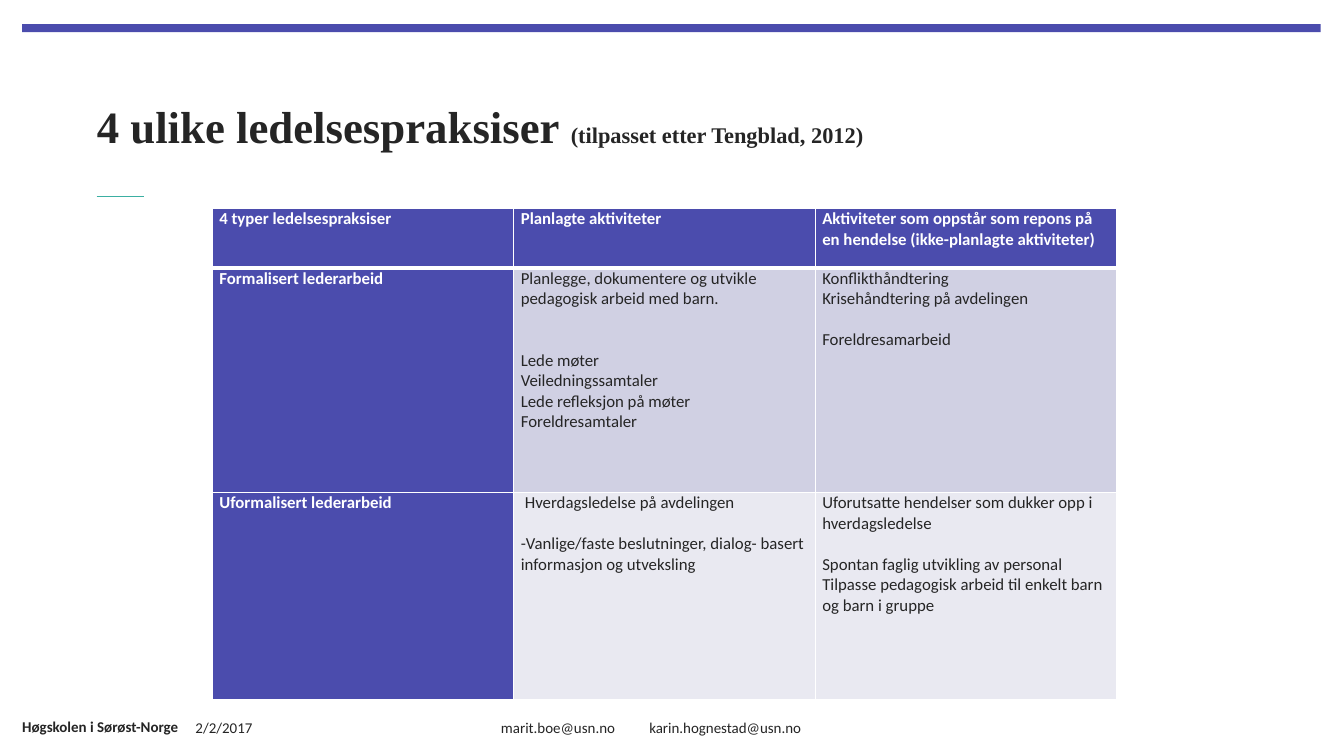
from dataclasses import dataclass

from lxml import etree
from pptx import Presentation
from pptx.dml.color import RGBColor
from pptx.enum.shapes import MSO_CONNECTOR, MSO_SHAPE
from pptx.enum.text import MSO_ANCHOR, MSO_AUTO_SIZE, PP_ALIGN
from pptx.oxml.ns import qn
from pptx.slide import Slide
from pptx.table import _Cell
from pptx.text.text import TextFrame, _Paragraph, _Run
from pptx.util import Inches, Pt

RECTANGLE = MSO_SHAPE.RECTANGLE
STRAIGHT = MSO_CONNECTOR.STRAIGHT
MIDDLE = MSO_ANCHOR.MIDDLE
LEFT = PP_ALIGN.LEFT
NO_AUTOFIT = MSO_AUTO_SIZE.NONE

INDIGO = RGBColor(0x4B, 0x4C, 0xAD)
TEAL = RGBColor(0x3B, 0xAF, 0xA2)
INK = RGBColor(0x25, 0x25, 0x25)
WHITE = RGBColor(0xFF, 0xFF, 0xFF)
LAVENDER = RGBColor(0xD0, 0xD0, 0xE3)
MIST = RGBColor(0xE9, 0xE9, 0xF1)

SLIDE_WIDTH, SLIDE_HEIGHT = Inches(13.33), Inches(7.5)
BODY_FONT, TITLE_FONT = "Calibri", "Times New Roman"
CELL_SIZE, FOOTER_SIZE = 12, 10.7
LINE_PITCH = 14.65


@dataclass(frozen=True)
class Area:
    """A box on a grid of 100 columns by 100 rows."""

    left: float
    top: float
    width: float
    height: float

    def box(self) -> tuple[int, int, int, int]:
        """Return the box as slide lengths."""
        return columns(self.left), rows(self.top), columns(self.width), rows(self.height)


@dataclass(frozen=True)
class Entry:
    """A paragraph in a table cell, with empty lines above it."""

    text: str
    lines_above: int = 0
    indent: float = 0


@dataclass(frozen=True)
class TableRow:
    """A table row: its height, the fill of its body cells and its cells."""

    height: float
    fill: RGBColor
    cells: tuple[tuple[Entry, ...], ...]


@dataclass(frozen=True)
class FooterText:
    """A line of footer text."""

    text: str
    area: Area
    bold: bool = False
    inset: float = 0
    tab: float = 0


TITLE_PARTS = (("4 ulike ledelsespraksiser ", 32), ("(tilpasset etter Tengblad, 2012)", 16))
TITLE_AREA = Area(7.2, 8.27, 87.1, 16.67)
BAR_AREA = Area(1.65, 3.2, 96.62, 1.07)
RULE_AREA = Area(7.2, 26, 3.55, 0)
TABLE_AREA = Area(15.8, 27.6, 67.29, 64.93)

TABLE_ROWS = (
    TableRow(7.87, INDIGO, (
        (Entry("4 typer ledelsespraksiser"),),
        (Entry("Planlagte aktiviteter"),),
        (Entry("Aktiviteter som oppstår som repons på en hendelse (ikke-planlagte aktiviteter)"),),
    )),
    TableRow(29.73, LAVENDER, (
        (Entry("Formalisert lederarbeid"),),
        (
            Entry("Planlegge, dokumentere og utvikle pedagogisk arbeid med barn."),
            Entry("Lede møter", lines_above=2),
            Entry("Veiledningssamtaler"),
            Entry("Lede refleksjon på møter"),
            Entry("Foreldresamtaler"),
        ),
        (
            Entry("Konflikthåndtering"),
            Entry("Krisehåndtering på avdelingen"),
            Entry("Foreldresamarbeid", lines_above=1),
        ),
    )),
    TableRow(27.33, MIST, (
        (Entry("Uformalisert lederarbeid"),),
        (
            Entry("Hverdagsledelse på avdelingen", indent=0.3),
            Entry("-Vanlige/faste beslutninger, dialog- basert informasjon og utveksling", lines_above=1),
        ),
        (
            Entry("Uforutsatte hendelser som dukker opp i hverdagsledelse"),
            Entry("Spontan faglig utvikling av personal", lines_above=1),
            Entry("Tilpasse pedagogisk arbeid til enkelt barn og barn i gruppe"),
        ),
    )),
)

FOOTERS = (
    FooterText("Høgskolen i Sørøst-Norge", Area(1.65, 93.47, 18.08, 5.33), bold=True),
    FooterText("2/2/2017", Area(14.55, 94.67, 18.08, 3.07)),
    FooterText("marit.boe@usn.no\tkarin.hognestad@usn.no", Area(32.63, 94.67, 31.66, 3.07), inset=4.65, tab=11.03),
)


def columns(count: float) -> int:
    """Return the width of a number of grid columns."""
    return round(SLIDE_WIDTH * count / 100)


def rows(count: float) -> int:
    """Return the height of a number of grid rows."""
    return round(SLIDE_HEIGHT * count / 100)


def style_run(run: _Run, size: float, color: RGBColor, bold: bool, font_name: str = BODY_FONT) -> None:
    """Set the font of a run."""
    run.font.name = font_name
    run.font.size = Pt(size)
    run.font.bold = bold
    run.font.color.rgb = color


def frame_text(text_frame: TextFrame, inset: float = 0) -> None:
    """Centre a text frame vertically and set its margins."""
    text_frame.word_wrap = True
    text_frame.auto_size = NO_AUTOFIT
    text_frame.vertical_anchor = MIDDLE
    text_frame.margin_left = columns(inset)
    text_frame.margin_top = text_frame.margin_right = text_frame.margin_bottom = 0


def add_tab_stop(paragraph: _Paragraph, position: float) -> None:
    """Add a left tab stop to a paragraph."""
    tab_list = etree.SubElement(paragraph._p.get_or_add_pPr(), qn("a:tabLst"))
    etree.SubElement(tab_list, qn("a:tab"), pos=str(columns(position)), algn="l")


def add_title(slide: Slide) -> None:
    """Fill the title placeholder."""
    title = slide.shapes.title
    title.left, title.top, title.width, title.height = TITLE_AREA.box()
    frame_text(title.text_frame)
    paragraph = title.text_frame.paragraphs[0]
    paragraph.alignment = LEFT
    for text, size in TITLE_PARTS:
        run = paragraph.add_run()
        run.text = text
        style_run(run, size, INK, True, TITLE_FONT)


def add_decoration(slide: Slide) -> None:
    """Draw the top bar and the short rule under the title."""
    bar = slide.shapes.add_shape(RECTANGLE, *BAR_AREA.box())
    bar.shadow.inherit = False
    bar.fill.solid()
    bar.fill.fore_color.rgb = INDIGO
    bar.line.fill.background()
    left, top, width, height = RULE_AREA.box()
    rule = slide.shapes.add_connector(STRAIGHT, left, top, left + width, top + height)
    rule.line.color.rgb = TEAL
    rule.line.width = Pt(0.5)
    etree.SubElement(rule._element.spPr, qn("a:effectLst"))


def add_border(cell: _Cell, side: str, width: float) -> None:
    """Add a white border to one side of a cell."""
    line = etree.SubElement(cell._tc.get_or_add_tcPr(), qn(f"a:ln{side}"), w=str(Pt(width)))
    fill = etree.SubElement(line, qn("a:solidFill"))
    etree.SubElement(fill, qn("a:srgbClr"), val=str(WHITE))


def fill_cell(cell: _Cell, entries: tuple[Entry, ...], fill: RGBColor) -> None:
    """Fill a cell with colour and paragraphs."""
    cell.fill.solid()
    cell.fill.fore_color.rgb = fill
    cell.margin_left = cell.margin_right = Inches(0.07)
    cell.margin_top = cell.margin_bottom = 0
    cell.text_frame.text = "\n".join(entry.text for entry in entries)
    heading = fill == INDIGO
    for paragraph, entry in zip(cell.text_frame.paragraphs, entries):
        if entry.lines_above:
            paragraph.space_before = Pt(entry.lines_above * LINE_PITCH)
        if entry.indent:
            paragraph._p.get_or_add_pPr().set("indent", str(columns(entry.indent)))
        style_run(paragraph.runs[0], CELL_SIZE, WHITE if heading else INK, heading)


def add_practice_table(slide: Slide) -> None:
    """Draw the table of leadership practices."""
    table = slide.shapes.add_table(len(TABLE_ROWS), len(TABLE_ROWS[0].cells), *TABLE_AREA.box()).table
    for row_index, row in enumerate(TABLE_ROWS):
        table.rows[row_index].height = rows(row.height)
        for column_index, entries in enumerate(row.cells):
            cell = table.cell(row_index, column_index)
            widths = {"L": 1, "R": 1, "T": 3 if row_index == 1 else 1, "B": 3 if row_index == 0 else 1}
            for side, width in widths.items():
                add_border(cell, side, width)
            fill_cell(cell, entries, INDIGO if column_index == 0 else row.fill)


def add_footer(slide: Slide, footer: FooterText) -> None:
    """Write one footer text."""
    text_frame = slide.shapes.add_textbox(*footer.area.box()).text_frame
    frame_text(text_frame, footer.inset)
    text_frame.text = footer.text
    paragraph = text_frame.paragraphs[0]
    if footer.tab:
        add_tab_stop(paragraph, footer.tab)
    for run in paragraph.runs:
        style_run(run, FOOTER_SIZE, INK, footer.bold)


def main() -> None:
    """Build and save the slide."""
    presentation = Presentation()
    presentation.slide_width, presentation.slide_height = SLIDE_WIDTH, SLIDE_HEIGHT
    slide = presentation.slides.add_slide(presentation.slide_layouts[5])
    add_decoration(slide)
    add_title(slide)
    add_practice_table(slide)
    for footer in FOOTERS:
        add_footer(slide, footer)
    presentation.save("out.pptx")


if __name__ == "__main__":
    main()
